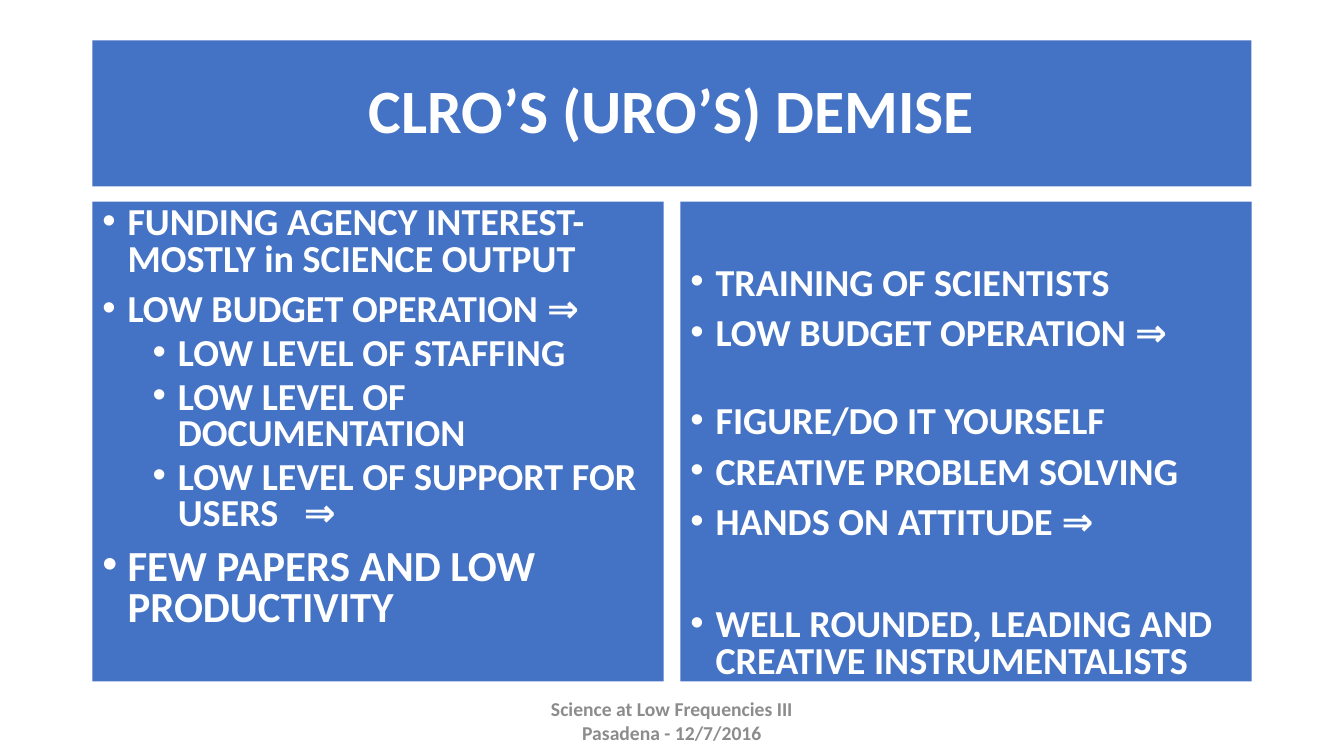
from lxml.etree import SubElement
from pptx import Presentation
from pptx.dml.color import RGBColor
from pptx.enum.shapes import MSO_SHAPE as Shape
from pptx.enum.text import MSO_ANCHOR as Anchor, PP_ALIGN as Align
from pptx.oxml.ns import qn
from pptx.util import Pt

BLUE = RGBColor(0x44, 0x72, 0xC4)
WHITE = RGBColor(0xFF, 0xFF, 0xFF)
GRAY = RGBColor(0x8C, 0x8C, 0x8C)
FONT = "Calibri"

LEFT, WIDTH = 66, 828
COLUMN_TOP, COLUMN_WIDTH, COLUMN_HEIGHT = 144, 408, 342.7
BODY_SIZE, LARGE_SIZE = 27.2, 30.6
HANGING = 18
LEVEL_MARGINS = (18, 54)
LEVEL_SPACING = (10, 5)

# Each item: text, level, size, extra space before
PROBLEMS = [
    ("FUNDING AGENCY INTEREST- MOSTLY in SCIENCE OUTPUT", 0, BODY_SIZE, 0),
    ("LOW BUDGET OPERATION ⇒", 0, BODY_SIZE, 0),
    ("LOW LEVEL OF STAFFING", 1, BODY_SIZE, 0),
    ("LOW LEVEL OF DOCUMENTATION", 1, BODY_SIZE, 0),
    ("LOW LEVEL OF SUPPORT FOR USERS\t⇒", 1, BODY_SIZE, 0),
    ("FEW PAPERS AND LOW PRODUCTIVITY", 0, LARGE_SIZE, 0),
]
BENEFITS = [
    ("TRAINING OF SCIENTISTS", 0, BODY_SIZE, 0),
    ("LOW BUDGET OPERATION ⇒", 0, BODY_SIZE, 0),
    ("FIGURE/DO IT YOURSELF", 0, BODY_SIZE, 26.5),
    ("CREATIVE PROBLEM SOLVING", 0, BODY_SIZE, 0),
    ("HANDS ON ATTITUDE ⇒", 0, BODY_SIZE, 0),
    ("WELL ROUNDED, LEADING AND CREATIVE INSTRUMENTALISTS", 0, BODY_SIZE, 36.5),
]
FOOTER = ["Science at Low Frequencies III", "Pasadena - 12/7/2016"]


def add_panel(page, left, top, width, height, anchor):
    """Add a blue rectangle and return its text frame."""
    panel = page.shapes.add_shape(
        Shape.RECTANGLE, Pt(left), Pt(top), Pt(width), Pt(height))
    panel.shadow.inherit = False
    panel.fill.solid()
    panel.fill.fore_color.rgb = BLUE
    panel.line.fill.background()
    frame = panel.text_frame
    frame.word_wrap = True
    frame.vertical_anchor = anchor
    return frame


def next_paragraph(frame, index):
    return frame.add_paragraph() if index else frame.paragraphs[0]


def add_text(para, text, size, color):
    span = para.add_run()
    span.text = text
    span.font.name = FONT
    span.font.size = Pt(size)
    span.font.bold = True
    span.font.color.rgb = color


def add_bullet(para, level):
    properties = para._p.get_or_add_pPr()
    properties.set("marL", str(Pt(LEVEL_MARGINS[level])))
    properties.set("indent", str(-Pt(HANGING)))
    SubElement(properties, qn("a:buFont"), typeface="Arial")
    SubElement(properties, qn("a:buChar"), char="•")


def add_title(page, text):
    frame = add_panel(page, LEFT, 28.8, WIDTH, 104.4, Anchor.MIDDLE)
    para = frame.paragraphs[0]
    para.alignment = Align.CENTER
    para.line_spacing = 0.9
    add_text(para, text, 44, WHITE)


def add_column(page, left, items, top_margin):
    frame = add_panel(page, left, COLUMN_TOP, COLUMN_WIDTH, COLUMN_HEIGHT,
                      Anchor.TOP)
    frame.margin_top = Pt(top_margin)
    for index, (text, level, size, extra) in enumerate(items):
        para = next_paragraph(frame, index)
        add_bullet(para, level)
        para.level = level
        para.alignment = Align.LEFT
        para.line_spacing = 0.8
        para.space_before = Pt(LEVEL_SPACING[level] + extra if index else 0)
        add_text(para, text, size, WHITE)


def add_footer(page, lines):
    box = page.shapes.add_textbox(Pt(318), Pt(500.4), Pt(324), Pt(28.8))
    frame = box.text_frame
    frame.word_wrap = True
    frame.vertical_anchor = Anchor.MIDDLE
    for index, line in enumerate(lines):
        para = next_paragraph(frame, index)
        para.alignment = Align.CENTER
        add_text(para, line, 14, GRAY)


def main():
    deck = Presentation()
    deck.slide_width, deck.slide_height = Pt(960), Pt(540)
    page = deck.slides.add_slide(deck.slide_layouts[6])
    add_title(page, "CLRO’S (URO’S) DEMISE")
    add_column(page, LEFT, PROBLEMS, 3.6)
    add_column(page, LEFT + WIDTH - COLUMN_WIDTH, BENEFITS, 46.8)
    add_footer(page, FOOTER)
    deck.save("out.pptx")


if __name__ == "__main__":
    main()
